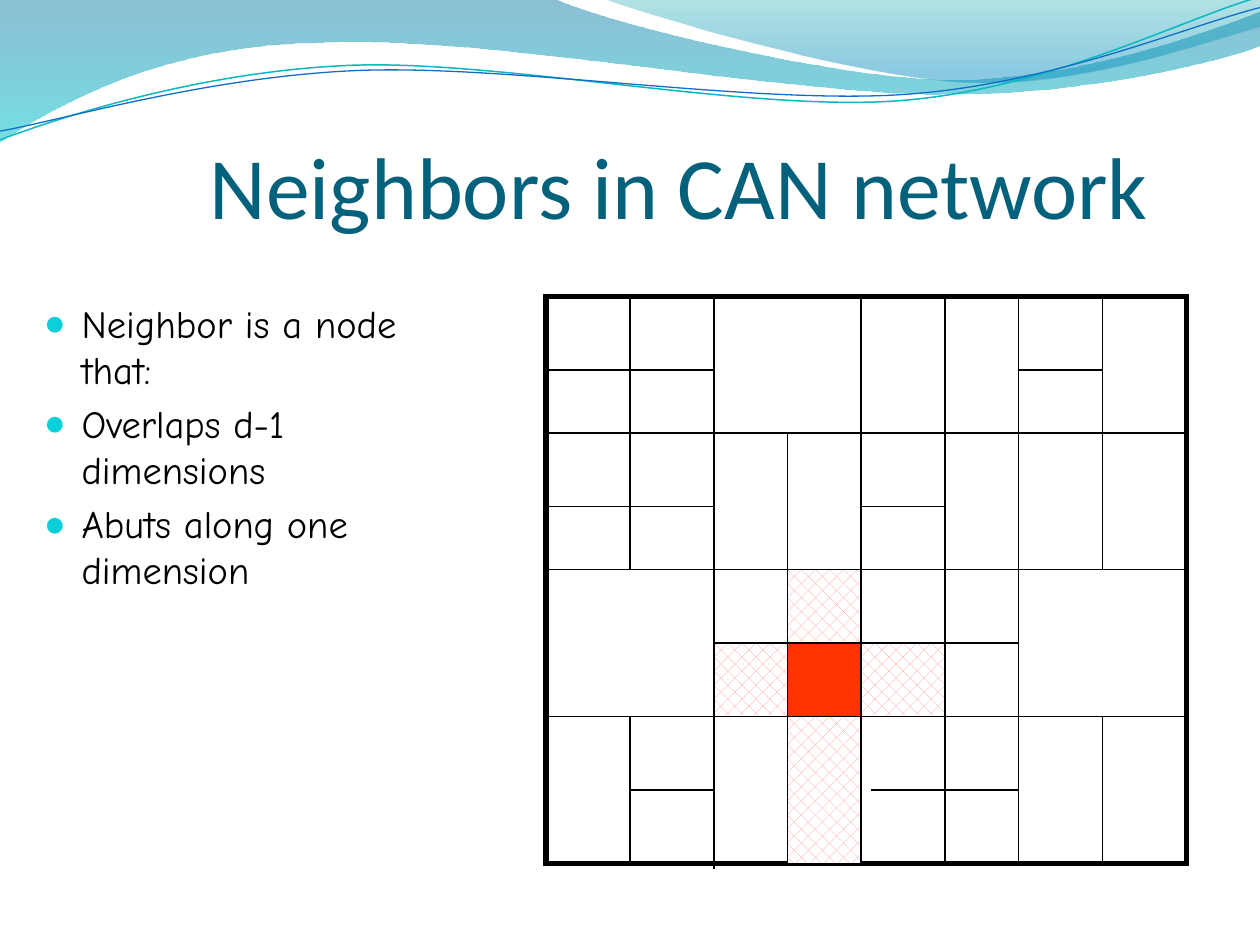
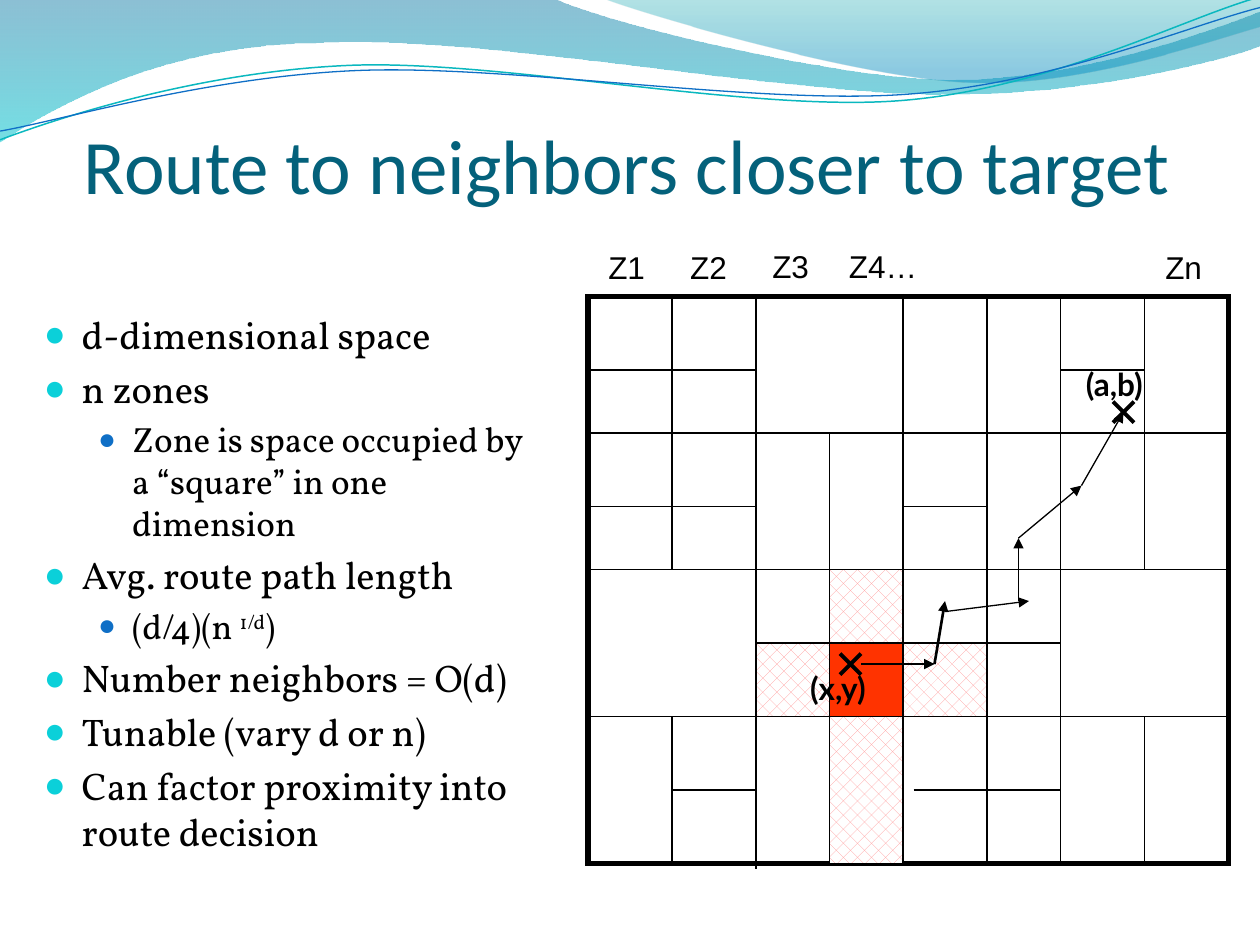
from dataclasses import dataclass

from lxml.etree import SubElement
from pptx import Presentation
from pptx.dml.color import RGBColor
from pptx.enum.dml import MSO_PATTERN
from pptx.enum.shapes import MSO_CONNECTOR, MSO_SHAPE
from pptx.enum.text import MSO_ANCHOR, MSO_AUTO_SIZE, PP_ALIGN
from pptx.oxml.ns import qn
from pptx.util import Pt


@dataclass(frozen=True)
class Theme:
    ink: str = "000000"
    white: str = "FFFFFF"
    title: str = "04617B"
    node: str = "FF3300"
    hatch: str = "FF9999"
    dots: tuple = ("0BD0D9", "0F6FC6")
    dot_sizes: tuple = (95, 85)
    sizes: tuple = (22, 20)
    label: int = 18
    head: str = "Calibri"
    plain: str = "Arial"
    mark: str = "Lato"
    thin: float = 0.75
    thick: float = 3


# Each path is a start point, then lines (2 numbers) and curves (6 numbers).
WAVES = [
    # path, gradient stops: place, colour, opacity
    ([(0, -0.7), (316.8, -0.7), (342.7, 12.2, 478.1, 45.4, 545.8, 45.4),
      (614.2, 45.4, 689.8, 18.7, 720, 6.5), (720.7, 25.9),
      (707.8, 31.7, 626.4, 54.7, 537.1, 54),
      (446.4, 54, 275, 20.2, 185, 24.5),
      (92.9, 25.2, 33.1, 59.8, -0.7, 81.4), (0, -0.7)],
     [(0, "0074A1", 45), (1, "00C6CF", 55)]),
    ([(344.9, -0.7), (366.5, 7.9, 491, 44.6, 553.7, 46.8),
      (616.3, 49.7, 691.9, 23, 720, 15.1), (720, 0), (344.9, -0.7)],
     [(0, "00A1A9", 30), (0.8, "008BBF", 45)]),
]
STRANDS = [
    # path, colour, width
    ([(0, 79.9), (34.6, 67, 113.8, 41, 199.4, 37.4),
      (284.4, 33.8, 427, 64.1, 513.4, 57.6),
      (599.8, 51.1, 675.4, 10.8, 718.6, -1.4)], "0AB8BF", 0.85),
    ([(0, 74.9), (33.8, 69.1, 118.1, 43.9, 203.8, 40.3),
      (290.2, 36.7, 429.8, 59.8, 516.2, 54),
      (601.9, 48.2, 677.5, 15.1, 720, 4.3)], "0F6FC6", 0.75),
]

# Zone edges, measured from the top left corner of the frame.
TOP, WIDE, HIGH = 169.5, 366, 324
UPRIGHTS = {  # x: spans of y
    48: [(0, 78), (78, 156), (240, 324)],
    96: [(0, 327)],
    138: [(78, 156), (156, 240), (240, 324)],
    180: [(-1.5, 325.5)],
    228: [(0, 78), (78, 156), (156, 258), (240, 324)],
    270: [(0, 324)],
    318: [(0, 78), (78, 156), (240, 324)],
}
LEVELS = {  # y: spans of x
    42: [(0, 96), (270, 318)],
    78: [(0, 366)],
    120: [(0, 96), (180, 228)],
    156: [(0, 366)],
    198: [(96, 186), (228, 270)],
    240: [(0, 366)],
    282: [(48, 96), (186, 270)],
}
NEAR = [(138, 240, 42, 84), (96, 198, 42, 42), (138, 156, 42, 42)]


def rgb(code):
    return RGBColor.from_string(code)


class Deck:
    def __init__(self, theme):
        self.theme = theme
        self.file = Presentation()
        self.file.slide_width, self.file.slide_height = Pt(720), Pt(540)
        self.base = self.file.slide_layouts[5]
        self.slide = None

    def start(self, text, box, size):
        """Add a slide with a title."""
        first = self.slide is None
        self.slide = self.file.slides.add_slide(self.base)
        if first:
            self.band()
        title = self.slide.shapes.title
        title.left, title.top, title.width, title.height = map(Pt, box)
        frame = title.text_frame
        frame.auto_size = MSO_AUTO_SIZE.NONE
        frame.vertical_anchor = MSO_ANCHOR.BOTTOM
        frame.margin_left = frame.margin_right = frame.margin_bottom = 0
        frame.margin_top = Pt(3.6)
        para = frame.paragraphs[0]
        para.alignment = PP_ALIGN.LEFT
        self.run(para, text, size, self.theme.head, self.theme.title)

    def band(self):
        """Draw the waves and move them to the layout, behind its text."""
        shapes = [self.wave(*wave) for wave in WAVES]
        shapes += [self.strand(*strand) for strand in STRANDS]
        tree = self.base.shapes.element
        for i, shape in enumerate(shapes):
            shape.element.nvSpPr.cNvPr.set("id", str(100 + i))
            tree.insert(2 + i, shape.element)

    def free(self, path):
        """Build an outline; each curve takes the place of three lines."""
        spots = [(Pt(x), Pt(y)) for part in path
                 for x, y in zip(part[::2], part[1::2])]
        maker = self.slide.shapes.build_freeform(*spots[0])
        maker.add_line_segments(spots[1:], close=path[0] == path[-1])
        shape = maker.convert_to_shape()
        shape.shadow.inherit = False
        lines = iter(list(shape.element.iter(qn("a:lnTo"))))
        for part in path[1:]:
            line = next(lines)
            if len(part) == 6:
                line.tag = qn("a:cubicBezTo")
                for _ in range(2):
                    extra = next(lines)
                    line.append(extra[0])
                    extra.getparent().remove(extra)
        return shape

    def wave(self, path, stops):
        shape = self.free(path)
        shape.line.fill.background()
        shape.fill.gradient()
        shape.fill.gradient_angle = 270
        for stop, (place, color, _) in zip(shape.fill.gradient_stops, stops):
            stop.position = place
            stop.color.rgb = rgb(color)
        tints = shape.element.spPr.iter(qn("a:srgbClr"))
        for tint, (_, _, alpha) in zip(tints, stops):
            SubElement(tint, qn("a:alpha"), val=str(alpha * 1000))
        return shape

    def strand(self, path, color, width):
        shape = self.free(path)
        shape.fill.background()
        self.edge(shape, color, width)
        return shape

    def edge(self, shape, color, width):
        shape.line.color.rgb = rgb(color)
        shape.line.width = Pt(width)

    def run(self, para, text, size, font, color, bold=False):
        run = para.add_run()
        run.text = text
        run.font.size, run.font.name = Pt(size), font
        run.font.color.rgb = rgb(color)
        run.font.bold = bold
        return run

    def list(self, box, font, items):
        """Add bullets; an item is a level and its runs, odd ones raised."""
        t = self.theme
        frame = self.slide.shapes.add_textbox(*map(Pt, box)).text_frame
        frame.word_wrap = True
        for i, (level, *texts) in enumerate(items):
            para = frame.add_paragraph() if i else frame.paragraphs[0]
            size = t.sizes[level]
            para.level = level
            para.space_before = Pt(size * 0.2)
            props = para._p.get_or_add_pPr()
            props.set("marL", str(Pt((21.6, 50.4)[level])))
            props.set("indent", str(-Pt((21.6, 19.44)[level])))
            tint = SubElement(props, qn("a:buClr"))
            SubElement(tint, qn("a:srgbClr"), val=t.dots[level])
            SubElement(props, qn("a:buSzPct"),
                       val=str(t.dot_sizes[level] * 1000))
            SubElement(props, qn("a:buFont"), typeface=t.plain)
            SubElement(props, qn("a:buChar"), char="●")
            for j, text in enumerate(texts):
                run = self.run(para, text, size, font, t.ink)
                if j % 2:
                    run.font._element.set("baseline", "30000")

    def label(self, text, box, font, bold=False, fill=None):
        shape = self.slide.shapes.add_textbox(*map(Pt, box))
        if fill:
            shape.fill.solid()
            shape.fill.fore_color.rgb = rgb(fill)
        shape.text_frame.word_wrap = False
        self.run(shape.text_frame.paragraphs[0], text, self.theme.label,
                 font, self.theme.ink, bold)

    def rect(self, x, y, w, h, fill=None, hatch=False, width=None):
        t = self.theme
        shape = self.slide.shapes.add_shape(
            MSO_SHAPE.RECTANGLE, Pt(x), Pt(y), Pt(w), Pt(h))
        shape.shadow.inherit = False
        if hatch:
            shape.fill.patterned()
            shape.fill.pattern = MSO_PATTERN.PERCENT_25
            shape.fill.fore_color.rgb = rgb(t.hatch)
            shape.fill.back_color.rgb = rgb(t.white)
        elif fill:
            shape.fill.solid()
            shape.fill.fore_color.rgb = rgb(fill)
        else:
            shape.fill.background()
        self.edge(shape, t.ink, width or t.thin)
        SubElement(shape.element.spPr.find(qn("a:ln")), qn("a:miter"),
                   lim="800000")

    def line(self, x1, y1, x2, y2, width=None, arrow=False):
        line = self.slide.shapes.add_connector(
            MSO_CONNECTOR.STRAIGHT, Pt(x1), Pt(y1), Pt(x2), Pt(y2))
        self.edge(line, self.theme.ink, width or self.theme.thin)
        props = line.element.spPr
        if arrow:
            SubElement(props.find(qn("a:ln")), qn("a:tailEnd"),
                       type="triangle")
        SubElement(props, qn("a:effectLst"))

    def cross(self, x, y, half=6):
        for rise in (half, -half):
            self.line(x - half, y - rise, x + half, y + rise, 2.25)

    def zones(self, left):
        """Draw the zone map: one node and its four neighbours."""
        self.rect(left + 180, TOP + 198, 48, 42, hatch=True)
        self.rect(left, TOP, WIDE, HIGH, width=self.theme.thick)
        for x, spans in UPRIGHTS.items():
            for y1, y2 in spans:
                self.line(left + x, TOP + y1, left + x, TOP + y2)
        for y, spans in LEVELS.items():
            for x1, x2 in spans:
                self.line(left + x1, TOP + y, left + x2, TOP + y)
        self.rect(left + 138, TOP + 198, 42, 42, self.theme.node)
        for x, y, w, h in NEAR:
            self.rect(left + x, TOP + y, w, h, hatch=True)


def neighbors(deck):
    deck.start("Neighbors in CAN network", (120, 15, 552, 120.4), 50)
    deck.list((18, 168, 252, 324), "Comic Neue", [
        (0, "Neighbor is a node that:"),
        (0, "Overlaps d-1 dimensions"),
        (0, "Abuts along one dimension"),
    ])
    deck.zones(312)


def route(deck):
    t = deck.theme
    deck.start("Route to neighbors closer to target",
               (48, 15, 624, 105), 44)
    deck.list((18, 174, 300, 324), "Vollkorn", [
        (0, "d-dimensional space"),
        (0, "n zones"),
        (1, "Zone is space occupied by a “square” in one dimension"),
        (0, "Avg. route path length"),
        (1, "(d/4)(n ", "1/d", ")"),
        (0, "Number neighbors = O(d)"),
        (0, "Tunable (vary d or n)"),
        (0, "Can factor proximity into route decision"),
    ])
    for text, x, y, w, fill in [
            ("Z1", 340.5, 138, 38, None), ("Z2", 387.3, 138, 38, None),
            ("Z3", 434.2, 137.5, 38, None), ("Z4…", 478, 137.5, 57.6, None),
            ("Zn", 658.8, 138, 38, t.white)]:
        deck.label(text, (x, y, w, 31), t.plain, fill=fill)
    deck.zones(336)
    for text, spot, x, y in [("(x,y)", (455.8, 378.7), 486, 379.5),
                             ("(a,b)", (613.4, 204.8), 642, 235.5)]:
        deck.label(text, (*spot, 58, 28.8), t.mark, bold=True)
        deck.cross(x, y)
    for hop in [(534, 379.5, 540, 343.5, 1.5),
                (582, 343.5, 582, 307.5),
                (582, 307.5, 618, 277.5),
                (618, 277.5, 642, 235.5),
                (492, 379.5, 534, 379.5),
                (540, 349.5, 588, 343.5)]:
        deck.line(*hop, arrow=True)


def main():
    deck = Deck(Theme())
    neighbors(deck)
    route(deck)
    deck.file.save("out.pptx")


if __name__ == "__main__":
    main()
